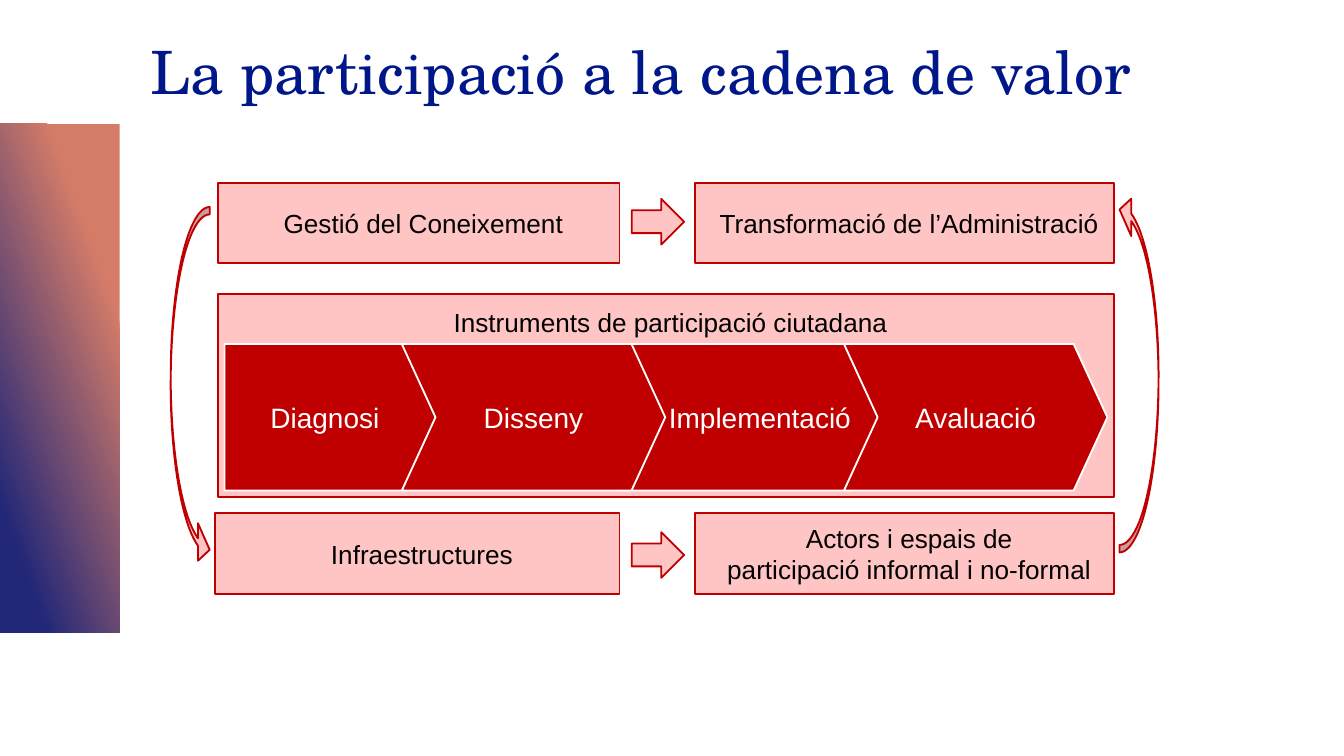
"""Build the slide on participation along the value chain."""
import pptx
import pptx.util
from pptx.dml.color import RGBColor
from pptx.enum.shapes import MSO_SHAPE
from pptx.enum.text import MSO_ANCHOR, PP_ALIGN

NAVY = RGBColor(0x00, 0x17, 0x89)
BAND_TOP = RGBColor(0xD4, 0x7C, 0x68)
BAND_END = RGBColor(0x22, 0x27, 0x78)
PINK = RGBColor(0xFF, 0xC5, 0xC5)
RED = RGBColor(0xC0, 0x00, 0x00)
WHITE = RGBColor(0xFF, 0xFF, 0xFF)
BLACK = RGBColor(0x00, 0x00, 0x00)

SLIDE_W = 10
SLIDE_H = SLIDE_W * 9 / 16
TITLE = "La participació a la cadena de valor"
PANEL = "Instruments de participació ciutadana"
LEFT, RIGHT, EDGE = 1.62, 5.17, 8.29
TOP, MIDDLE, BOTTOM = 1.36, 2.19, 3.82
BOX_H = 0.6
BOXES = [
    (1.6, BOTTOM, 3.01, ["Infraestructures"]),
    (RIGHT, BOTTOM, EDGE - RIGHT, ["Actors i espais de", "participació informal i no-formal"]),
    (LEFT, TOP, 2.99, ["Gestió del Coneixement"]),
    (RIGHT, TOP, EDGE - RIGHT, ["Transformació de l’Administració"]),
]
STEP_LEFT, STEP_END, STEP_W, STEP_TOP, STEP_H = 2.99, 6.28, 1.96, 2.56, 1.09
STEP_PITCH = (STEP_END - STEP_LEFT) / 2
STEPS = [(1, "Implementació", 0.08), (2, "Avaluació", 0), (0, "Disseny", 0)]
LOOPS = [(1.27, 1.54, 0), (8.33, 1.42, 180)]
ARROWS = [1.48, 3.96]


def add_shape(slide, kind, box, fill, line, adj=()):
    s = slide.shapes.add_shape(kind, *[pptx.util.Inches(v) for v in box])
    s.shadow.inherit = False
    s.fill.solid()
    s.fill.fore_color.rgb = fill
    s.line.color.rgb = line
    s.line.width = pptx.util.Pt(1)
    for i, value in enumerate(adj):
        s.adjustments[i] = value
    return s


def write(s, lines, size, color, insets, anchor=MSO_ANCHOR.MIDDLE, indent=0, wrap=True):
    tf = s.text_frame
    tf.word_wrap = wrap
    tf.vertical_anchor = anchor
    tf.margin_left, tf.margin_top, tf.margin_right, tf.margin_bottom = [
        pptx.util.Inches(v) for v in insets]
    for i, line in enumerate(lines):
        p = tf.add_paragraph() if i else tf.paragraphs[0]
        p.alignment = PP_ALIGN.CENTER
        if indent:
            p._p.get_or_add_pPr().set("marL", str(pptx.util.Inches(indent)))
        r = p.add_run()
        r.text = line
        r.font.name = "Arial"
        r.font.size = pptx.util.Pt(size)
        r.font.color.rgb = color


def add_box(slide, box, lines, anchor=MSO_ANCHOR.MIDDLE):
    s = add_shape(slide, MSO_SHAPE.RECTANGLE, box, PINK, RED)
    write(s, lines, 14, BLACK, [0.09] * 4, anchor, indent=0.07)


def add_band(slide):
    s = add_shape(slide, MSO_SHAPE.RECTANGLE, (0, 0.92, 0.89, 3.79), BAND_TOP, BAND_TOP)
    s.line.fill.background()
    s.fill.gradient()
    s.fill.gradient_angle = 200
    stops = [(0.23, BAND_TOP), (0.85, BAND_END)]
    for stop, (position, color) in zip(s.fill.gradient_stops, stops):
        stop.position = position
        stop.color.rgb = color


def add_title(slide):
    s = slide.shapes.title
    s.left, s.top, s.width, s.height = [pptx.util.Inches(v) for v in (1.02, 0.26, 8.67, 0.59)]
    tf = s.text_frame
    tf.word_wrap = True
    tf.vertical_anchor = MSO_ANCHOR.BOTTOM
    p = tf.paragraphs[0]
    p.alignment = PP_ALIGN.LEFT
    p.line_spacing = 0.9
    r = p.add_run()
    r.text = TITLE
    r.font.name = "TeX Gyre Schola"
    r.font.size = pptx.util.Pt(32)
    r.font.color.rgb = NAVY


def main():
    prs = pptx.Presentation()
    prs.slide_width = pptx.util.Inches(SLIDE_W)
    prs.slide_height = pptx.util.Inches(SLIDE_H)
    slide = prs.slides.add_slide(prs.slide_layouts[5])
    add_band(slide)
    add_title(slide)
    add_box(slide, (LEFT, MIDDLE, EDGE - LEFT, 1.51), [PANEL], MSO_ANCHOR.TOP)
    for left, top, width, lines in BOXES:
        add_box(slide, (left, top, width, BOX_H), lines)
    s = add_shape(slide, MSO_SHAPE.PENTAGON, (1.67, STEP_TOP, 1.62, STEP_H), RED, WHITE, [0.23])
    write(s, ["Diagnosi"], 15, WHITE, (0.1, 0.05, 0.1, 0.05))
    for column, label, inset in STEPS:
        box = (STEP_LEFT + column * STEP_PITCH, STEP_TOP, STEP_W, STEP_H)
        s = add_shape(slide, MSO_SHAPE.CHEVRON, box, RED, WHITE, [0.23])
        write(s, [label], 15, WHITE, (inset, 0.05, 0, 0.05), wrap=False)
    for left, top, turn in LOOPS:
        s = add_shape(slide, MSO_SHAPE.CURVED_RIGHT_ARROW, (left, top, 0.29, 2.69),
                      PINK, RED, (0.19, 0.96, 0.3))
        s.rotation = turn
    for top in ARROWS:
        add_shape(slide, MSO_SHAPE.RIGHT_ARROW, (4.7, top, 0.39, 0.34), PINK, RED)
    prs.save("out.pptx")


if __name__ == "__main__":
    main()
